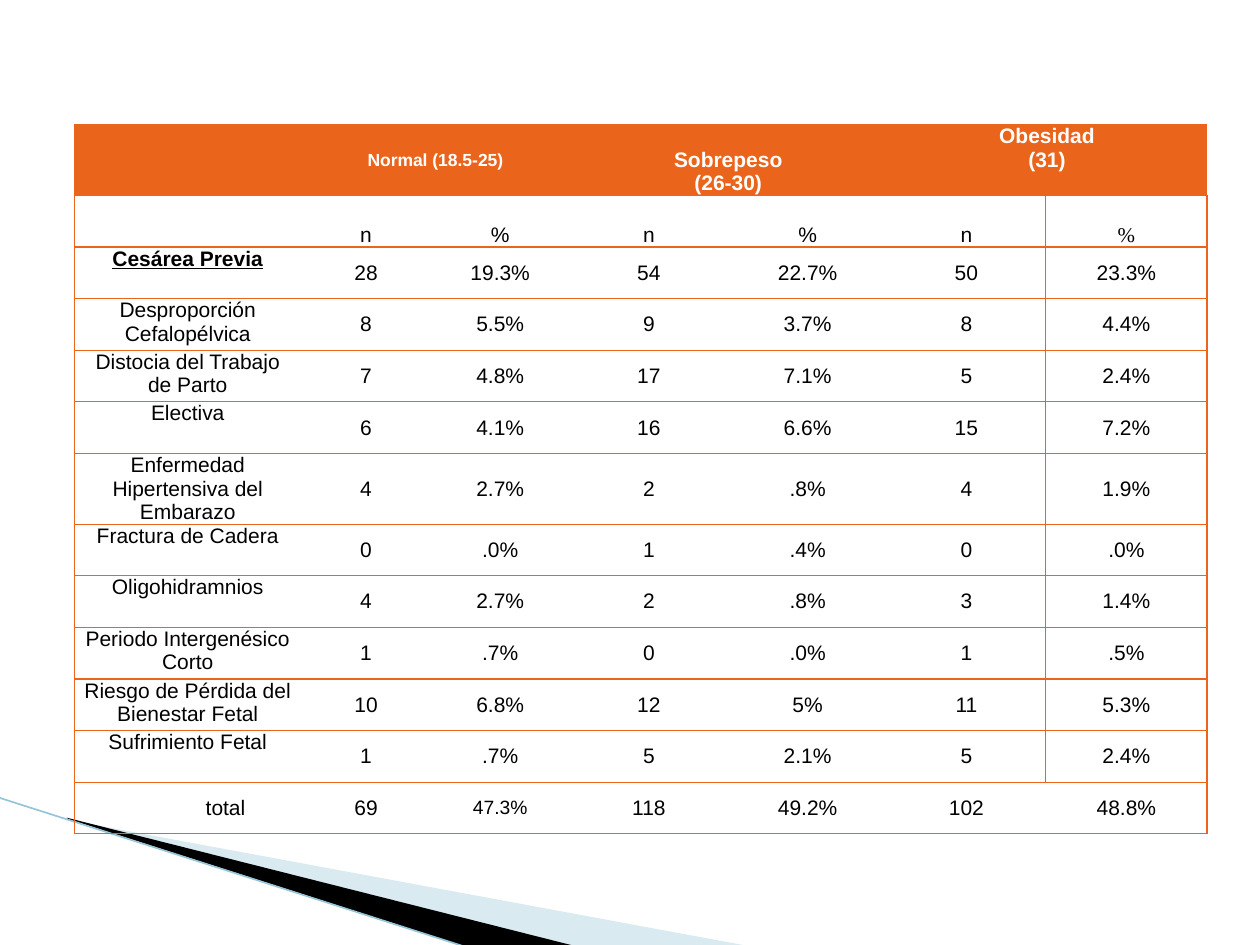
from lxml import etree
from pptx import Presentation
from pptx.dml.color import RGBColor
from pptx.enum.shapes import MSO_CONNECTOR as CONN
from pptx.enum.text import MSO_ANCHOR as ANCHOR, PP_ALIGN as ALIGN
from pptx.oxml.ns import qn
from pptx.util import Inches, Pt

ORANGE, BLACK, WHITE = "EB641B", "000000", "FFFFFF"


def rgb(color):
    return RGBColor.from_string(color)


def add_border(cell, side):
    """Draw one side of a cell: L, R, T or B."""
    ln = etree.SubElement(cell._tc.get_or_add_tcPr(), qn(f"a:ln{side}"), w=str(Pt(0.75)))
    fill = etree.SubElement(ln, qn("a:solidFill"))
    etree.SubElement(fill, qn("a:srgbClr"), val=ORANGE)


prs = Presentation()
prs.slide_width, prs.slide_height = Inches(10), Inches(7.5)
s = prs.slides.add_slide(prs.slide_layouts[6])

# Corner wedges
wedges = [
    ("A0CBDC", 40, [(0.55, 6.51), (5.95, 7.51), (4.56, 7.51), (0.55, 6.5)]),
    (BLACK, 100, [(0.53, 6.49), (4.57, 7.51), (3.72, 7.52), (0.54, 6.5)]),
]
for color, opacity, points in wedges:
    start, *rest = [(Inches(x), Inches(y)) for x, y in points]
    builder = s.shapes.build_freeform(*start)
    builder.add_line_segments(rest)
    sp = builder.convert_to_shape()
    sp.shadow.inherit = False
    sp.line.fill.background()
    sp.fill.solid()
    sp.fill.fore_color.rgb = rgb(color)
    if opacity < 100:
        clr = sp._element.spPr.find(".//" + qn("a:srgbClr"))
        etree.SubElement(clr, qn("a:alpha"), val=str(opacity * 1000))

# Corner line
line = s.shapes.add_connector(CONN.STRAIGHT, Inches(-0.01), Inches(6.33), Inches(3.71), Inches(7.52))
line.line.color.rgb = rgb("97C5D8")
line.line.width = Pt(0.95)
etree.SubElement(line._element.spPr, qn("a:effectLst"))

# Table content: label, then n and % for each weight group
header = ["", "", "Normal (18.5-25)", "", "Sobrepeso\n(26-30)", "", "Obesidad\n(31)", ""]
units = ["", ""] + ["n", "%"] * 3
causes = [
    ("Cesárea Previa", "28", "19.3%", "54", "22.7%", "50", "23.3%"),
    ("Desproporción Cefalopélvica", "8", "5.5%", "9", "3.7%", "8", "4.4%"),
    ("Distocia del Trabajo de Parto", "7", "4.8%", "17", "7.1%", "5", "2.4%"),
    ("Electiva", "6", "4.1%", "16", "6.6%", "15", "7.2%"),
    ("Enfermedad Hipertensiva del Embarazo", "4", "2.7%", "2", ".8%", "4", "1.9%"),
    ("Fractura de Cadera", "0", ".0%", "1", ".4%", "0", ".0%"),
    ("Oligohidramnios", "4", "2.7%", "2", ".8%", "3", "1.4%"),
    ("Periodo Intergenésico Corto", "1", ".7%", "0", ".0%", "1", ".5%"),
    ("Riesgo de Pérdida del Bienestar Fetal", "10", "6.8%", "12", "5%", "11", "5.3%"),
    ("Sufrimiento Fetal", "1", ".7%", "5", "2.1%", "5", "2.4%"),
]
total = ["", "total", "69", "47.3%", "118", "49.2%", "102", "48.8%"]
rows = [header, units] + [[label, "", *values] for label, *values in causes] + [total]
last = len(rows) - 1

# Table frame and grid
widths = [0.6, 1.2, 1.03, 1.1, 1.26, 1.26, 1.26, 1.28]
heights = [0.41] * len(rows)
heights[0] = heights[6] = 0.56
frame = s.shapes.add_table(len(rows), len(widths), Inches(0.59), Inches(0.99),
                           Inches(sum(widths)), Inches(sum(heights)))
table = frame.table
table.first_row = table.horz_banding = False
style = table._tbl.tblPr.find(qn("a:tableStyleId"))
style.text = "{2D5ABB26-0587-4C30-8999-92F81FD0307C}"
for column, width in zip(table.columns, widths):
    column.width = Inches(width)
for row, height in zip(table.rows, heights):
    row.height = Inches(height)

# Merged cells
for c in range(0, 8, 2):
    table.cell(0, c).merge(table.cell(0, c + 1))
for r in range(1, last):
    table.cell(r, 0).merge(table.cell(r, 1))

# Formats that differ from the plain body text
formats = {
    (0, 2): {"size": Pt(10)},
    (1, 7): {"name": "Times New Roman"},
    (2, 0): {"bold": True, "underline": True},
    (last, 3): {"size": Pt(11)},
}
anchors = {(0, 4): ANCHOR.BOTTOM, (0, 6): ANCHOR.TOP}

# Cells
for r, texts in enumerate(rows):
    for c, text in enumerate(texts):
        cell = table.cell(r, c)
        cell.margin_left = cell.margin_right = Inches(0.06)
        cell.margin_top = cell.margin_bottom = 0
        if r == 1:
            anchor = ANCHOR.BOTTOM
        elif 1 < r < last and c == 0:
            anchor = ANCHOR.TOP
        else:
            anchor = anchors.get((r, c), ANCHOR.MIDDLE)
        cell.vertical_anchor = anchor

        # Borders: every row, the outer sides and the last % column
        if c == 0:
            add_border(cell, "L")
        if c == 7 or (c == 6 and 0 < r < last):
            add_border(cell, "R")
        add_border(cell, "T")
        add_border(cell, "B")
        if r == 0:
            cell.fill.solid()
            cell.fill.fore_color.rgb = rgb(ORANGE)
        else:
            cell.fill.background()

        # Text
        cell.text = text
        font = {"name": "Arial", "size": Pt(12), "bold": r == 0, **formats.get((r, c), {})}
        for p in cell.text_frame.paragraphs:
            p.alignment = ALIGN.CENTER
            for key, value in font.items():
                setattr(p.font, key, value)
            for run in p.runs:
                for key, value in font.items():
                    setattr(run.font, key, value)
                run.font.color.rgb = rgb(WHITE if r == 0 else BLACK)

prs.save("out.pptx")
